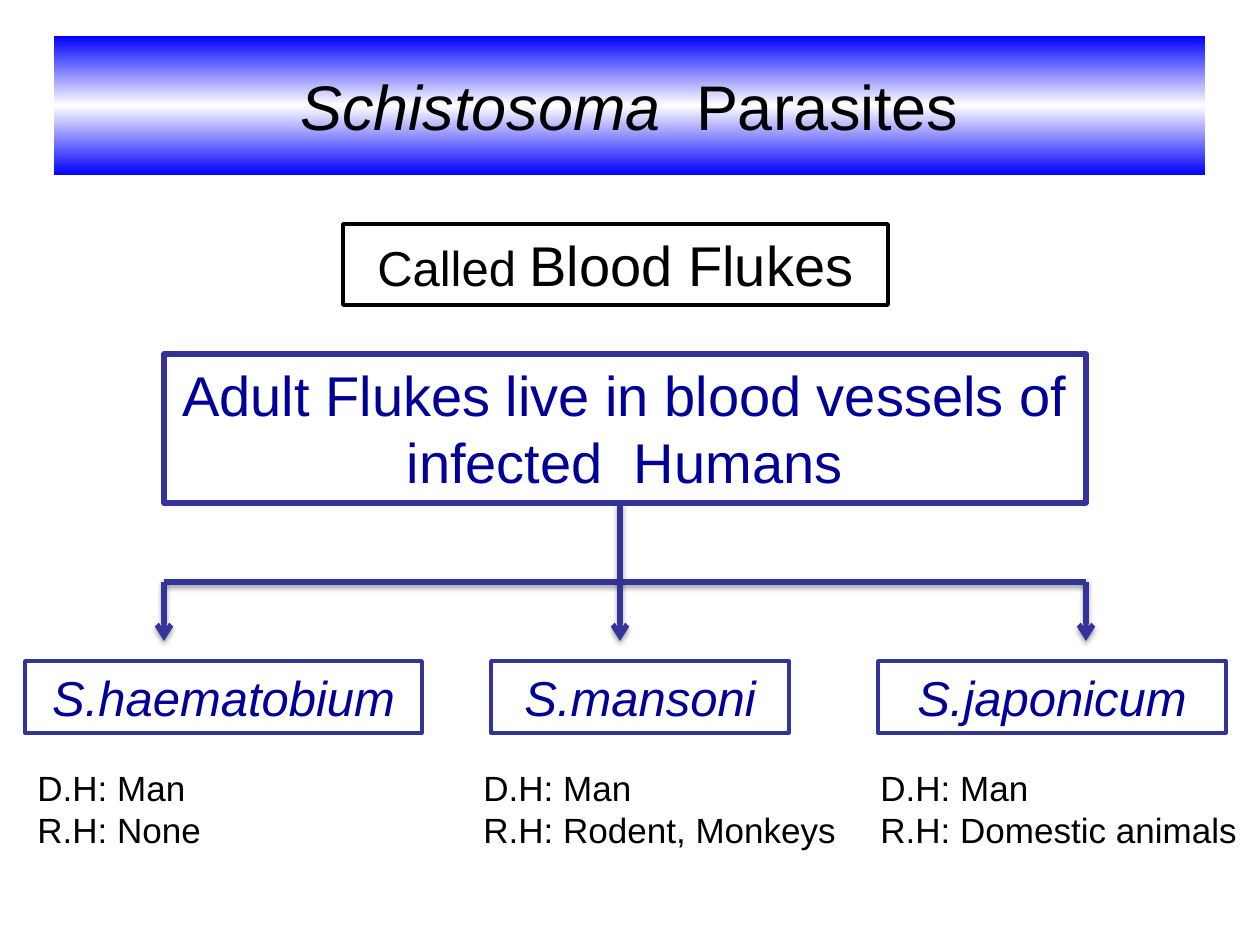
from copy import deepcopy

from lxml import etree
from pptx import Presentation
from pptx.dml.color import RGBColor
from pptx.enum.shapes import MSO_CONNECTOR, MSO_SHAPE
from pptx.enum.text import MSO_ANCHOR, PP_ALIGN
from pptx.oxml import parse_xml
from pptx.oxml.ns import nsdecls, qn
from pptx.util import Emu, Pt

RECT = MSO_SHAPE.RECTANGLE
STRAIGHT = MSO_CONNECTOR.STRAIGHT
CENTER, LEFT = PP_ALIGN.CENTER, PP_ALIGN.LEFT
TOP, MIDDLE = MSO_ANCHOR.TOP, MSO_ANCHOR.MIDDLE

PX = 914400 / 126
FONT = "Arial"
COLORS = {"black": "000000", "white": "FFFFFF", "band": "0000FF",
          "line": "333399", "navy": "000099"}
RGB = {name: RGBColor.from_string(value) for name, value in COLORS.items()}
SHADOW = (f'<a:effectLst {nsdecls("a")}>'
          '<a:outerShdw blurRad="40000" dist="20000" dir="5400000" rotWithShape="0">'
          f'<a:srgbClr val="{COLORS["black"]}"><a:alpha val="38000"/></a:srgbClr>'
          '</a:outerShdw></a:effectLst>')


def px(*values):
    return [Emu(round(v * PX)) for v in values]


def write(sp, paragraphs, color, align=CENTER, anchor=TOP):
    """Fill a shape with paragraphs, each a list of (text, size, italic)."""
    tf = sp.text_frame
    tf.word_wrap = True
    tf.vertical_anchor = anchor
    for i, runs in enumerate(paragraphs):
        p = tf.add_paragraph() if i else tf.paragraphs[0]
        p.alignment = align
        for text, size, italic in runs:
            r = p.add_run()
            r.text = text
            r.font.name = FONT
            r.font.size = Pt(size)
            r.font.italic = italic
            r.font.color.rgb = RGB[color]


prs = Presentation()
prs.slide_width, prs.slide_height = px(1260, 945)
s = prs.slides.add_slide(prs.slide_layouts[5])

# Title on a blue-white-blue band
title = s.shapes.title
title.left, title.top, title.width, title.height = px(54, 36, 1151, 139)
title.fill.gradient()
title.fill.gradient_angle = 90
stops = title.fill.gradient_stops
for stop, color in zip(stops, ("band", "white")):
    stop.color.rgb = RGB[color]
stops[1].position = 0.5
gs_list = title.element.spPr.find(".//" + qn("a:gsLst"))
last = deepcopy(gs_list[0])
last.set("pos", "100000")
gs_list.append(last)
write(title, [[("Schistosoma  ", 36, True), ("Parasites", 36, False)]],
      "black", anchor=MIDDLE)

# Trunk, crossbar and three arrows: x1, y1, x2, y2, arrowhead
left, mid, right = 164, 620, 1086
box_bottom, bar, tip = 503, 582, 641
lines = [(mid, box_bottom, mid, bar, False), (left, bar, right, bar, False)]
lines += [(x, bar, x, tip, True) for x in (left, mid, right)]
for *ends, arrow in lines:
    cx = s.shapes.add_connector(STRAIGHT, *px(*ends))
    cx.line.color.rgb = RGB["line"]
    cx.line.width = Pt(3)
    if arrow:
        etree.SubElement(cx.line._get_or_add_ln(), qn("a:tailEnd"), type="arrow")
    cx._element.spPr.append(parse_xml(SHADOW))

# Outlined boxes: position, line colour, line width, text colour, runs
boxes = [
    ((343, 224, 545, 81), "black", 2, "black",
     [("Called ", 28, False), ("Blood Flukes", 32, False)]),
    ((164, 354, 922, 149), "line", 3, "navy",
     [("Adult Flukes live in blood vessels of infected  Humans", 32, False)]),
]
species = [("S.haematobium", 25, 397), ("S.mansoni", 491, 298), ("S.japonicum", 878, 348)]
boxes += [((x, 661, w, 72), "line", 2, "navy", [(name, 28, True)])
          for name, x, w in species]
for place, line, width, color, runs in boxes:
    sp = s.shapes.add_shape(RECT, *px(*place))
    sp.shadow.inherit = False
    sp.fill.solid()
    sp.fill.fore_color.rgb = RGB["white"]
    sp.line.color.rgb = RGB[line]
    sp.line.width = Pt(width)
    write(sp, [runs], color)

# Hosts of each species
hosts = [("None", 25, 417), ("Rodent, Monkeys", 471, 397), ("Domestic animals", 868, 392)]
for reservoir, x, w in hosts:
    tb = s.shapes.add_textbox(*px(x, 760, w, 97))
    write(tb, [[("D.H: Man", 20, False)], [(f"R.H: {reservoir}", 20, False)]],
          "black", LEFT)

prs.save("out.pptx")
